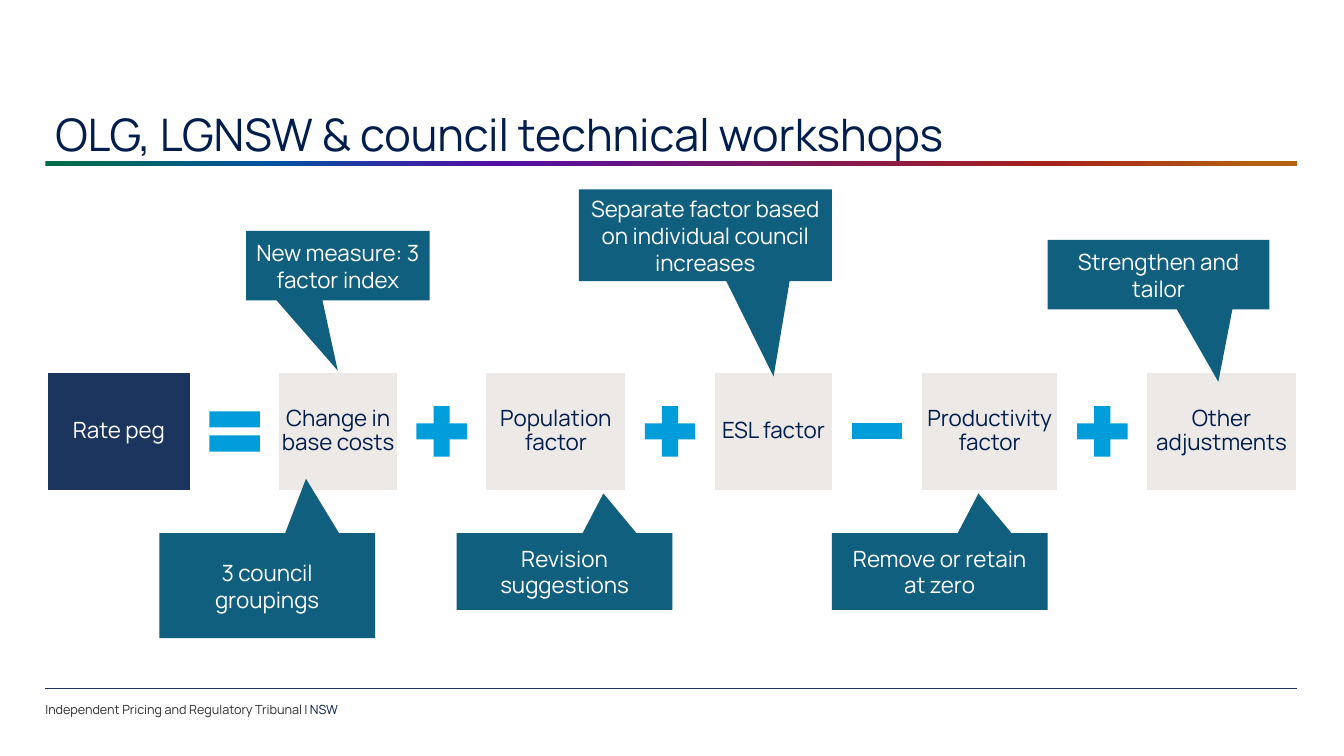
from lxml import etree
from pptx import Presentation
from pptx import util as u
from pptx.dml import color
from pptx.enum import shapes, text
from pptx.oxml import ns

COLOURS = {
    "navy": "011D4B", "result": "1C355E", "term": "ECE9E7", "operator": "009DDB",
    "callout": "115F7E", "white": "FFFFFF", "grey": "2E2E2F",
}
RAINBOW = [(1, "006C49"), (18, "0352A1"), (36, "520FA4"),
           (58, "7B185F"), (80, "A4201B"), (97, "B3610F")]
FONT = "Manrope"
SHAPE = shapes.MSO_SHAPE
MARGIN, CONTENT_WIDTH = 0.45, 12.41
OPERATOR_SIZE = 0.68

TERMS = [
    ("Rate peg", 1.42, SHAPE.RECTANGLE),
    ("Change in base costs", 1.18, SHAPE.RECTANGLE),
    ("Population factor", 1.39, SHAPE.FLOWCHART_PROCESS),
    ("ESL factor", 1.18, SHAPE.FLOWCHART_PROCESS),
    ("Productivity factor", 1.36, SHAPE.RECTANGLE),
    ("Other adjustments", 1.49, SHAPE.RECTANGLE),
]
OPERATORS = [SHAPE.MATH_EQUAL, SHAPE.MATH_PLUS, SHAPE.MATH_PLUS,
             SHAPE.MATH_MINUS, SHAPE.MATH_PLUS]
RISING, FALLING = (0.18, -1.02), (0.27, 1.54)
CALLOUTS = [
    ("New measure: 3 factor index", (2.44, 2.29, 1.82, 0.69), (0, 1.51)),
    ("Revision suggestions", (4.53, 5.29, 2.14, 0.76), RISING),
    ("Separate factor based on individual council increases",
     (5.74, 1.88, 2.51, 0.91), FALLING),
    ("Remove or retain at zero", (8.25, 5.29, 2.14, 0.76), RISING),
    ("Strengthen and tailor", (10.39, 2.38, 2.2, 0.69), FALLING),
    ("3 council groupings", (1.58, 5.29, 2.14, 1.04), RISING),
]


def rgb(name):
    return color.RGBColor.from_string(COLOURS[name])


def inches(box):
    return [u.Inches(length) for length in box]


def add_block(page, kind, box, fill, outline=None):
    block = page.shapes.add_shape(kind, *inches(box))
    block.shadow.inherit = False
    block.fill.solid()
    block.fill.fore_color.rgb = rgb(fill)
    if outline:
        block.line.color.rgb = rgb(outline)
        block.line.width = u.Pt(1)
    else:
        block.line.fill.background()
    return block


def set_font(target, size, colour):
    target.font.name = FONT
    target.font.size = u.Pt(size)
    target.font.color.rgb = rgb(colour)


def write(block, words, size, colour, align, anchor, inset=None, spacing=None):
    frame = block.text_frame
    frame.word_wrap = True
    frame.vertical_anchor = anchor
    if inset is not None:
        frame.margin_left = frame.margin_right = u.Inches(inset)
        frame.margin_top = frame.margin_bottom = u.Inches(inset)
    para = frame.paragraphs[0]
    para.text = words
    para.alignment = align
    para.line_spacing = spacing
    set_font(para, size, colour)
    return para


def add_header(page, box):
    left, top, width, height = box
    title = page.shapes.add_textbox(*inches(box))
    write(title, "OLG, LGNSW & council technical workshops", 32, "navy",
          text.PP_ALIGN.LEFT, text.MSO_ANCHOR.BOTTOM, spacing=0.9)
    rule = add_block(page, SHAPE.RECTANGLE, (left, top + height - 0.05, width, 0.05), "navy")
    rule.fill.gradient()
    rule.fill.gradient_angle = 0
    stops = rule.element.spPr.find(".//" + ns.qn("a:gsLst"))
    for stop in list(stops):
        stops.remove(stop)
    for percent, colour in RAINBOW:
        stop = etree.SubElement(stops, ns.qn("a:gs"), pos=str(percent * 1000))
        etree.SubElement(stop, ns.qn("a:srgbClr"), val=colour)


def add_footer(page, box):
    left, top, width, height = box
    line = page.shapes.add_connector(
        shapes.MSO_CONNECTOR.STRAIGHT, *inches((left, top, left + width, top)))
    line.line.color.rgb = rgb("result")
    line.line.width = u.Pt(0.5)
    etree.SubElement(line.element.spPr, ns.qn("a:effectLst"))
    caption = page.shapes.add_textbox(*inches((left, top + 0.13, 4.58, height - 0.13)))
    para = write(caption, "Independent Pricing and Regulatory Tribunal | ", 9, "grey",
                 text.PP_ALIGN.LEFT, text.MSO_ANCHOR.TOP, inset=0)
    span = para.add_run()
    span.text = "NSW"
    set_font(span, 9, "navy")


def add_equation(page, box):
    left, top, width, height = box
    gap = (width - sum(term[1] for term in TERMS)) / len(OPERATORS)
    for index, (words, term_width, kind) in enumerate(TERMS):
        fill, colour = ("term", "navy") if index else ("result", "white")
        block = add_block(page, kind, (left, top, term_width, height), fill, "white")
        write(block, words, 16, colour, text.PP_ALIGN.CENTER,
              text.MSO_ANCHOR.MIDDLE, inset=0.02, spacing=0.9)
        left += term_width
        if index < len(OPERATORS):
            place = (left + (gap - OPERATOR_SIZE) / 2, top + (height - OPERATOR_SIZE) / 2,
                     OPERATOR_SIZE, OPERATOR_SIZE)
            add_block(page, OPERATORS[index], place, "operator")
        left += gap


def add_callout(page, box, words, tip):
    callout = add_block(page, SHAPE.RECTANGULAR_CALLOUT, box, "callout")
    callout.adjustments[0], callout.adjustments[1] = tip
    write(callout, words, 16, "white", text.PP_ALIGN.CENTER, text.MSO_ANCHOR.MIDDLE)


def main():
    deck = Presentation()
    deck.slide_width, deck.slide_height = u.Inches(13.33), u.Inches(7.5)
    page = deck.slides.add_slide(deck.slide_layouts[6])
    add_header(page, (MARGIN, 0.2, CONTENT_WIDTH, 1.45))
    add_footer(page, (MARGIN, 6.83, CONTENT_WIDTH, 0.28))
    add_equation(page, (0.47, 3.69, 12.39, 1.18))
    for words, box, tip in CALLOUTS:
        add_callout(page, box, words, tip)
    deck.save("out.pptx")


if __name__ == "__main__":
    main()
